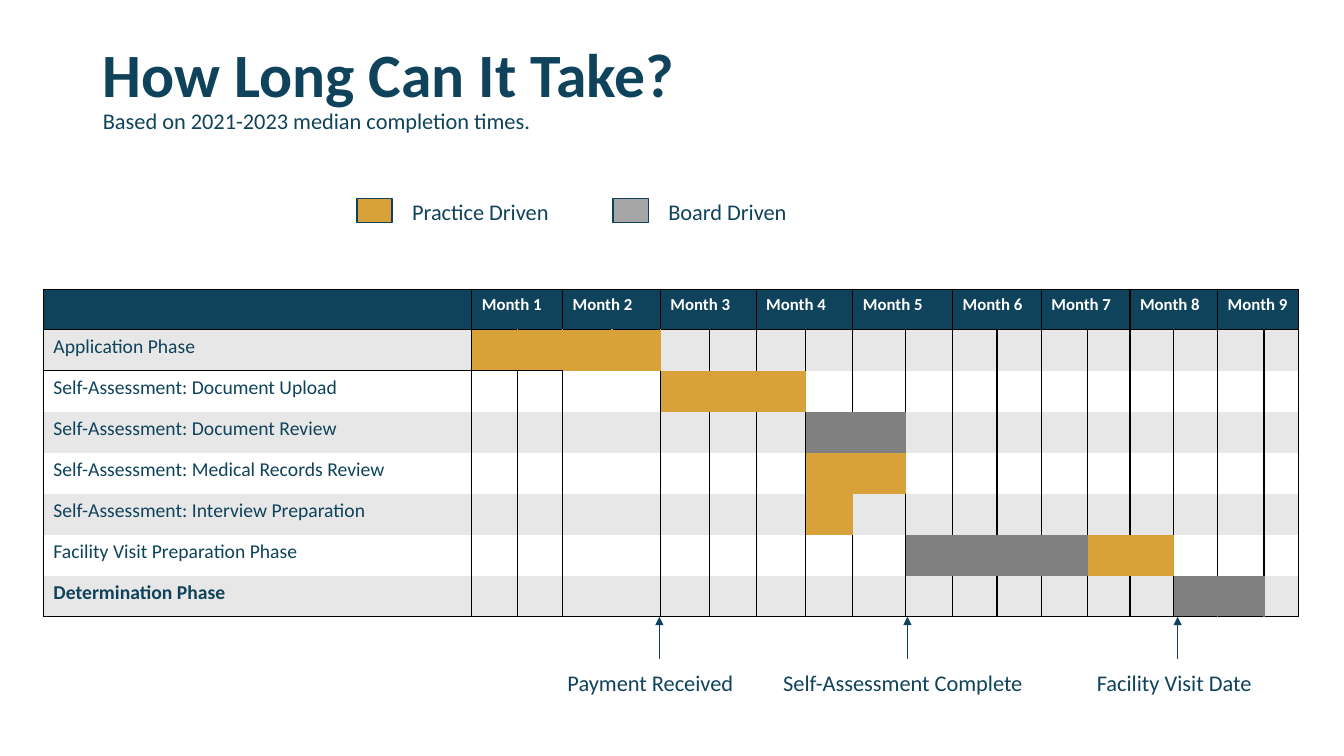
from lxml import etree
from pptx import Presentation
from pptx.dml.color import RGBColor
from pptx.enum.shapes import MSO_CONNECTOR, MSO_SHAPE
from pptx.enum.text import MSO_ANCHOR, MSO_AUTO_SIZE, PP_ALIGN
from pptx.oxml.ns import qn
from pptx.util import Inches, Pt

RECTANGLE = MSO_SHAPE.RECTANGLE
STRAIGHT = MSO_CONNECTOR.STRAIGHT
MIDDLE = MSO_ANCHOR.MIDDLE
LEFT = PP_ALIGN.LEFT
NO_AUTOFIT = MSO_AUTO_SIZE.NONE

NAVY = RGBColor(0x0F, 0x43, 0x5B)
GOLD = RGBColor(0xD9, 0xA1, 0x3A)
GREY = RGBColor(0x80, 0x80, 0x80)
LEGEND_GREY = RGBColor(0xA6, 0xA6, 0xA6)
BAND = RGBColor(0xE7, 0xE7, 0xE7)
WHITE = RGBColor(0xFF, 0xFF, 0xFF)
BLACK = RGBColor(0, 0, 0)
FONT = "Calibri"

LABEL_WIDTH = 4.25
HALF_MONTH_WIDTHS = [0.45, 0.45, 0.49, 0.48, 0.49, 0.46, 0.49, 0.47, 0.52,
                     0.47, 0.44, 0.44, 0.46, 0.42, 0.43, 0.44, 0.46, 0.34]
MONTHS = len(HALF_MONTH_WIDTHS) // 2
HEADER_HEIGHT = 0.4

# Each phase lists its bars as first half-month, last half-month, colour
PHASES = [
    ("Application Phase", [(1, 4, GOLD)]),
    ("Self-Assessment: Document Upload", [(5, 7, GOLD)]),
    ("Self-Assessment: Document Review", [(8, 9, GREY)]),
    ("Self-Assessment: Medical Records Review", [(8, 9, GOLD)]),
    ("Self-Assessment: Interview Preparation", [(8, 8, GOLD)]),
    ("Facility Visit Preparation Phase", [(10, 13, GREY), (14, 15, GOLD)]),
    ("Determination Phase", [(16, 17, GREY)]),
]
# Text, arrow position, text left, text width
MILESTONES = [
    ("Payment Received", 6.54, 5.53, 1.92),
    ("Self-Assessment Complete", 9, 7.67, 2.67),
    ("Facility Visit Date", 11.68, 10.78, 1.8),
]
LEGEND = [("Practice Driven", GOLD), ("Board Driven", LEGEND_GREY)]


def format_run(run, size, color, bold=False):
    run.font.name = FONT
    run.font.size = Pt(size)
    run.font.color.rgb = color
    run.font.bold = bold


def add_label(slide, text, left, top, width):
    box = slide.shapes.add_textbox(Inches(left), Inches(top), Inches(width), Inches(0.37))
    box.text_frame.word_wrap = True
    box.text_frame.text = text
    format_run(box.text_frame.paragraphs[0].runs[0], 16, NAVY)


def add_title(slide, left, top, width, height):
    title = slide.shapes.title
    title.left, title.top = Inches(left), Inches(top)
    title.width, title.height = Inches(width), Inches(height)
    frame = title.text_frame
    frame.auto_size = NO_AUTOFIT
    frame.vertical_anchor = MIDDLE
    frame.text = "How Long Can It Take?\vBased on 2021-2023 median completion times."
    paragraph = frame.paragraphs[0]
    paragraph.alignment = LEFT
    paragraph.line_spacing = 0.9
    heading, subtitle = paragraph.runs
    format_run(heading, 44, NAVY, True)
    format_run(subtitle, 16, NAVY)


def add_legend(slide, left, top, step):
    for index, (text, color) in enumerate(LEGEND):
        x = left + index * step
        swatch = slide.shapes.add_shape(RECTANGLE, Inches(x), Inches(top),
                                        Inches(0.35), Inches(0.24))
        swatch.shadow.inherit = False
        swatch.fill.solid()
        swatch.fill.fore_color.rgb = color
        swatch.line.color.rgb = NAVY
        swatch.line.width = Pt(1)
        add_label(slide, text, x + 0.45, top - 0.05, 1.8)


def style_cell(cell, fill, left, right, top, bottom):
    """Set the fill and the four borders; None means no border."""
    properties = cell._tc.get_or_add_tcPr()
    for tag, color in (("a:lnL", left), ("a:lnR", right), ("a:lnT", top), ("a:lnB", bottom)):
        line = etree.SubElement(properties, qn(tag), w=str(Pt(1)))
        if color is None:
            etree.SubElement(line, qn("a:noFill"))
        else:
            solid = etree.SubElement(line, qn("a:solidFill"))
            etree.SubElement(solid, qn("a:srgbClr"), val=str(color))
    cell.fill.solid()
    cell.fill.fore_color.rgb = fill


def write_cell(cell, text, size, color, bold):
    cell.text_frame.text = text
    format_run(cell.text_frame.paragraphs[0].runs[0], size, color, bold)


def fill_header(table):
    for column in range(len(table.columns)):
        style_cell(table.cell(0, column), NAVY, BLACK, BLACK, BLACK, BLACK)
    for month in range(1, MONTHS + 1):
        first = table.cell(0, 2 * month - 1)
        first.merge(table.cell(0, 2 * month))
        write_cell(first, f"Month {month}", 12, WHITE, True)


def fill_phase(table, row, name, bars):
    last = row == len(PHASES)
    background = BAND if row % 2 else WHITE
    left = BLACK
    for column in range(len(table.columns)):
        fill = next((color for start, end, color in bars if start <= column <= end), background)
        # Bars have no grid line inside; the middle of month 2 has none below row 1
        if fill != background:
            right = fill
        elif column == 3:
            right = None
        else:
            right = BLACK
        top = BLACK if row == 1 or (row == 2 and column < 3) else None
        bottom = BLACK if last or (row == 1 and column < 3) else None
        style_cell(table.cell(row, column), fill, left, right, top, bottom)
        left = right
    write_cell(table.cell(row, 0), name, 14, NAVY, last)


def add_schedule(slide, left, top, height):
    widths = [LABEL_WIDTH] + HALF_MONTH_WIDTHS
    table = slide.shapes.add_table(len(PHASES) + 1, len(widths), Inches(left), Inches(top),
                                   Inches(sum(widths)), Inches(height)).table
    table.first_row = False
    table.horz_banding = False
    for column, width in zip(table.columns, widths):
        column.width = Inches(width)
    for index, row in enumerate(table.rows):
        row.height = Inches((height - HEADER_HEIGHT) / len(PHASES) if index else HEADER_HEIGHT)
    fill_header(table)
    for row, (name, bars) in enumerate(PHASES, 1):
        fill_phase(table, row, name, bars)


def add_milestones(slide, top):
    for text, x, left, width in MILESTONES:
        arrow = slide.shapes.add_connector(STRAIGHT, Inches(x), Inches(top + 0.42),
                                           Inches(x), Inches(top))
        arrow.line.color.rgb = NAVY
        arrow.line.width = Pt(0.5)
        etree.SubElement(arrow.line._get_or_add_ln(), qn("a:tailEnd"), type="triangle")
        etree.SubElement(arrow._element.spPr, qn("a:effectLst"))
        add_label(slide, text, left, top + 0.47, width)


def main():
    presentation = Presentation()
    presentation.slide_width = Inches(13.33)
    presentation.slide_height = Inches(7.5)
    slide = presentation.slides.add_slide(presentation.slide_layouts[5])
    add_title(slide, 0.92, 0.16, 11.5, 1.45)
    add_legend(slide, 3.54, 1.97, 2.54)
    add_schedule(slide, 0.43, 2.87, 3.25)
    add_milestones(slide, 6.12)
    presentation.save("out.pptx")


if __name__ == "__main__":
    main()
